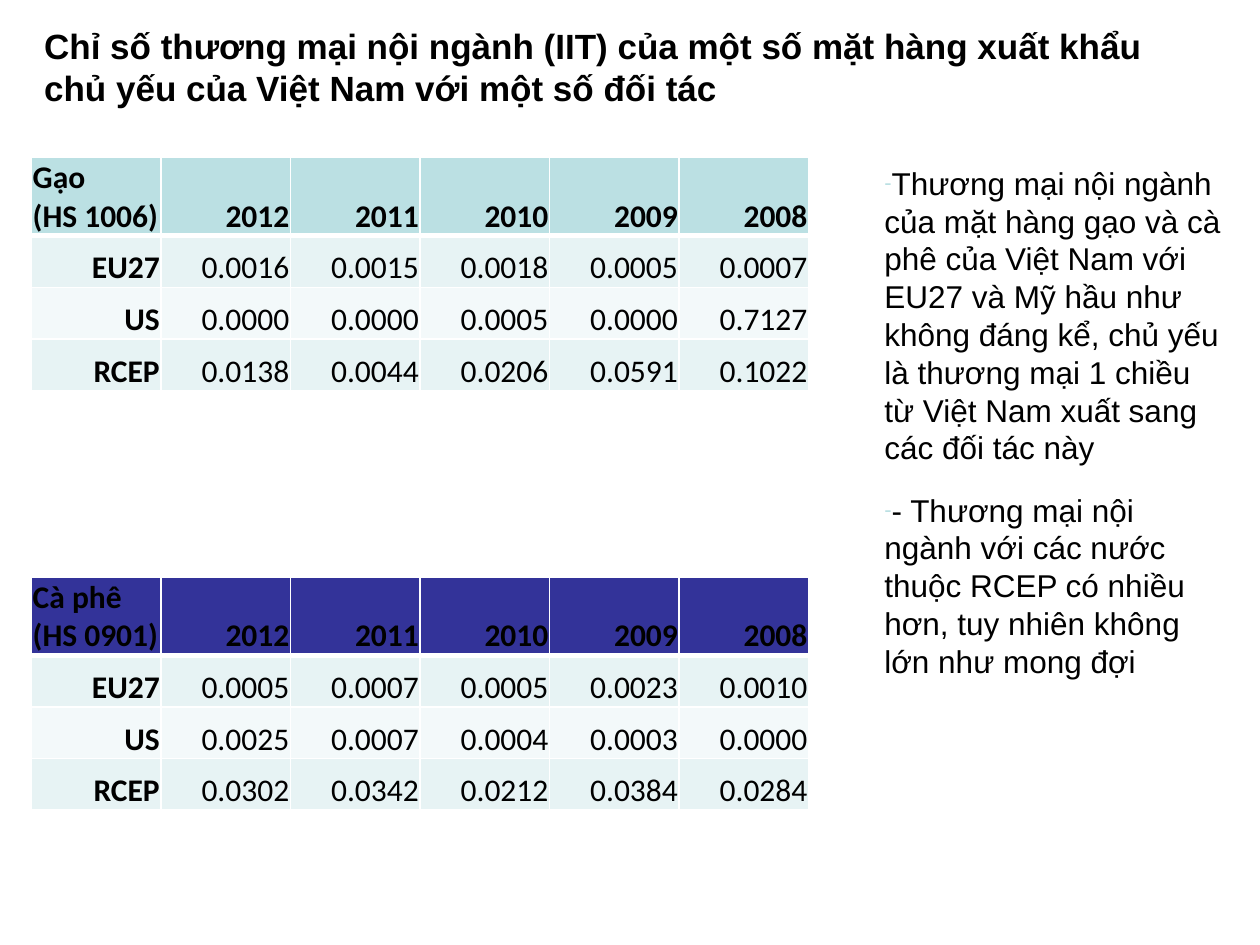
from pptx import Presentation
from pptx.dml.color import RGBColor as RGB
from pptx.enum.text import MSO_ANCHOR as Anchor, MSO_AUTO_SIZE as Auto, PP_ALIGN as Align
from pptx.oxml import parse_xml
from pptx.oxml.ns import nsdecls
from pptx.util import Inches, Pt

HUES = {
    "ink": "000000",
    "line": "FFFFFF",
    "rice": "BBE0E3",
    "coffee": "333399",
    "odd": "E7F3F4",
    "even": "F3F9FA",
    "dash": "BBE0E3",
}
YEARS = ["2012", "2011", "2010", "2009", "2008"]
RICE = [
    ["EU27", "0.0016", "0.0015", "0.0018", "0.0005", "0.0007"],
    ["US", "0.0000", "0.0000", "0.0005", "0.0000", "0.7127"],
    ["RCEP", "0.0138", "0.0044", "0.0206", "0.0591", "0.1022"],
]
COFFEE = [
    ["EU27", "0.0005", "0.0007", "0.0005", "0.0023", "0.0010"],
    ["US", "0.0025", "0.0007", "0.0004", "0.0003", "0.0000"],
    ["RCEP", "0.0302", "0.0342", "0.0212", "0.0384", "0.0284"],
]
TITLE = ("Chỉ số thương mại nội ngành (IIT) của một số mặt hàng xuất khẩu "
         "chủ yếu của Việt Nam với một số đối tác")
NOTES = [
    "Thương mại nội ngành của mặt hàng gạo và cà phê của Việt Nam với EU27 và Mỹ "
    "hầu như không đáng kể, chủ yếu là thương mại 1 chiều từ Việt Nam xuất sang "
    "các đối tác này",
    "- Thương mại nội ngành với các nước thuộc RCEP có nhiều hơn, tuy nhiên không "
    "lớn như mong đợi",
]


class Page:
    def __init__(self, slide):
        self.slide = slide
        self.font = "Arial"
        self.grid_font = "Calibri"
        self.size = 18

    def text(self, para, words, font, size, bold=False):
        run = para.add_run()
        run.text = words
        run.font.name = font
        run.font.size = Pt(size)
        run.font.bold = bold
        run.font.color.rgb = RGB.from_string(HUES["ink"])

    def title(self, words, box):
        shape = self.slide.shapes.title
        shape.left, shape.top, shape.width, shape.height = map(Inches, box)
        frame = shape.text_frame
        frame.word_wrap = True
        frame.auto_size = Auto.NONE
        frame.vertical_anchor = Anchor.BOTTOM
        para = frame.paragraphs[0]
        para.alignment = Align.LEFT
        para.line_spacing = 1.0
        self.text(para, words, self.font, 20, True)

    def border(self, cell, head):
        props = cell._tc.get_or_add_tcPr()
        for side in "LRTB":
            width = Pt(3 if head and side == "B" else 1)
            props.append(parse_xml(
                f'<a:ln{side} {nsdecls("a")} w="{width}"><a:solidFill>'
                f'<a:srgbClr val="{HUES["line"]}"/></a:solidFill></a:ln{side}>'))

    def cell(self, cell, lines, hue, head, first):
        self.border(cell, head)
        cell.fill.solid()
        cell.fill.fore_color.rgb = RGB.from_string(HUES[hue])
        cell.vertical_anchor = Anchor.BOTTOM
        cell.margin_left = cell.margin_right = cell.margin_top = Inches(0.01)
        cell.margin_bottom = 0
        frame = cell.text_frame
        for n, words in enumerate(lines.split("\n")):
            para = frame.add_paragraph() if n else frame.paragraphs[0]
            para.alignment = Align.LEFT if head and first else Align.RIGHT
            self.text(para, words, self.grid_font, self.size, head or first)

    def table(self, name, rows, hue, top):
        data = [[name] + YEARS] + rows
        box = map(Inches, (0.25, top, 6.17, 1.64))
        grid = self.slide.shapes.add_table(len(data), len(data[0]), *box).table
        for r, line in enumerate(data):
            fill = hue if r == 0 else "odd" if r % 2 else "even"
            for c, words in enumerate(line):
                self.cell(grid.cell(r, c), words, fill, r == 0, c == 0)

    def bullet(self, para):
        props = para._p.get_or_add_pPr()
        for tag in (
            f'<a:buClr {nsdecls("a")}><a:srgbClr val="{HUES["dash"]}"/></a:buClr>',
            f'<a:buSzPct {nsdecls("a")} val="70000"/>',
            f'<a:buFont {nsdecls("a")} typeface="{self.font}"/>',
            f'<a:buChar {nsdecls("a")} char="-"/>',
        ):
            props.append(parse_xml(tag))

    def notes(self, texts, box):
        frame = self.slide.shapes.add_textbox(*map(Inches, box)).text_frame
        frame.word_wrap = True
        for n, words in enumerate(texts):
            para = frame.add_paragraph() if n else frame.paragraphs[0]
            para.space_before = Pt(4)
            para.space_after = Pt(10)
            self.bullet(para)
            self.text(para, words, self.font, self.size)


def main():
    deck = Presentation()
    deck.slide_width, deck.slide_height = Inches(10), Inches(7.5)
    page = Page(deck.slides.add_slide(deck.slide_layouts[5]))
    page.title(TITLE, (0.25, 0.29, 8.92, 0.62))
    page.table("Gạo\n(HS 1006)", RICE, "rice", 1.25)
    page.table("Cà phê (HS 0901)", COFFEE, "coffee", 4.58)
    page.notes(NOTES, (6.92, 1.25, 2.92, 3.75))
    deck.save("out.pptx")


if __name__ == "__main__":
    main()
